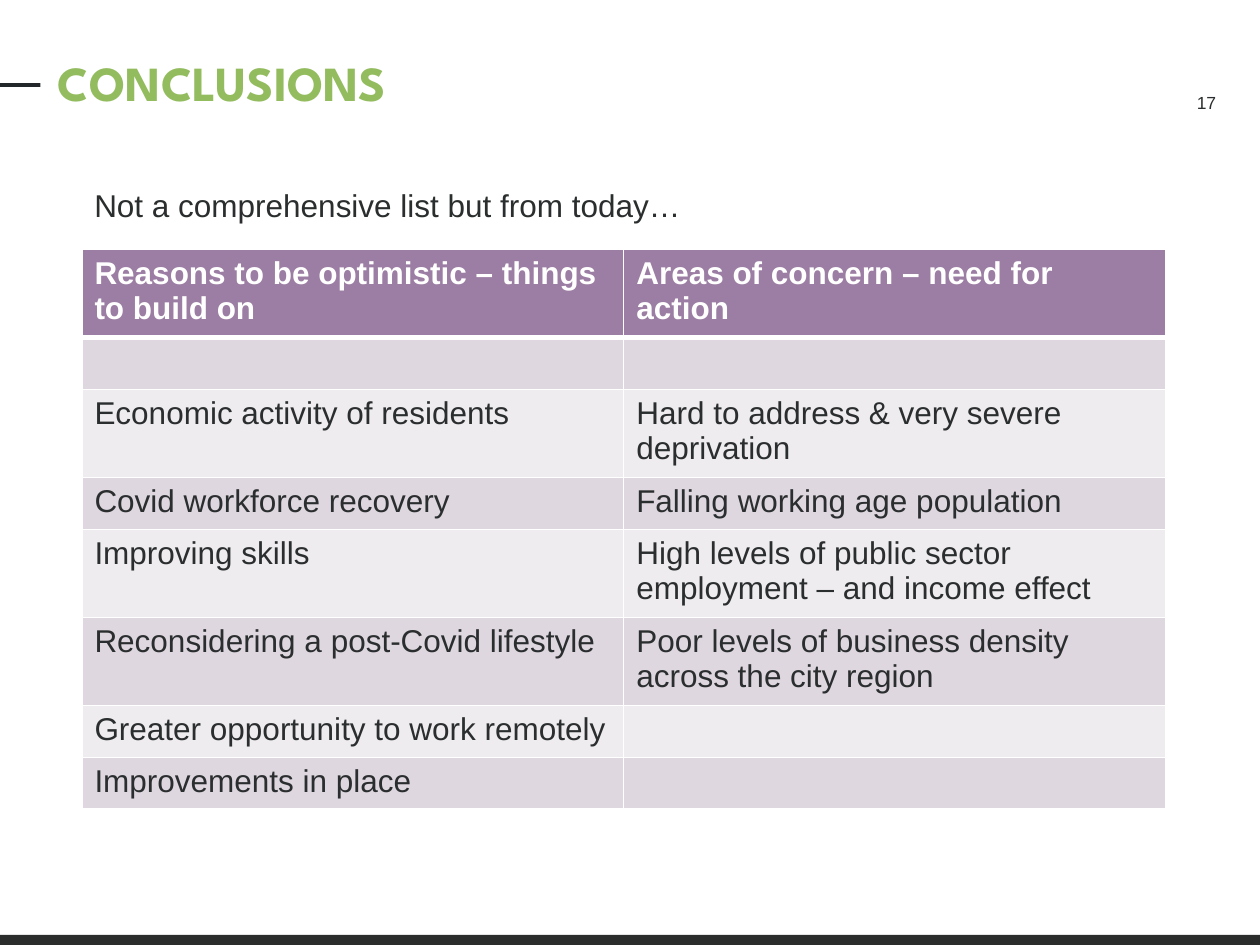
from lxml import etree
from pptx import Presentation
from pptx.dml.color import RGBColor
from pptx.enum.shapes import MSO_SHAPE
from pptx.enum.text import MSO_ANCHOR, PP_ALIGN
from pptx.oxml.ns import qn
from pptx.util import Inches, Pt

RECT = MSO_SHAPE.RECTANGLE
TOP = MSO_ANCHOR.TOP
LEFT, RIGHT = PP_ALIGN.LEFT, PP_ALIGN.RIGHT

INK, WHITE, GREEN = "2B2E2E", "FFFFFF", "93BC5F"
HEAD, BANDS = "9C7DA3", ("EFECF0", "DED7E0")

TITLE = "CONCLUSIONS"
INTRO = "Not a comprehensive list but from today…"
PAGE = "17"
ROWS = [
    ("Reasons to be optimistic – things to build on",
     "Areas of concern – need for action"),
    ("", ""),
    ("Economic activity of residents",
     "Hard to address & very severe deprivation"),
    ("Covid workforce recovery", "Falling working age population"),
    ("Improving skills",
     "High levels of public sector employment – and income effect"),
    ("Reconsidering a post-Covid lifestyle",
     "Poor levels of business density across the city region"),
    ("Greater opportunity to work remotely", ""),
    ("Improvements in place", ""),
]
BARS = [((0, 0.66, 0.32, 0.03), "24272A"), ((0, 7.42, 10, 0.08), "2B2D2D")]
TABLE = (0.65, 1.98, 8.6, 3.28)


def place(box):
    return [Inches(v) for v in box]


def rgb(code):
    return RGBColor.from_string(code)


def style(para, size, color, bold=False, face="Arial", align=LEFT):
    para.alignment = align
    font = para.font
    font.name, font.size, font.bold = face, Pt(size), bold
    font.color.rgb = rgb(color)


def add_text(slide, box, text, size, align=LEFT):
    frame = slide.shapes.add_textbox(*place(box)).text_frame
    frame.word_wrap = True
    frame.text = text
    style(frame.paragraphs[0], size, INK, align=align)


def add_bar(slide, box, color):
    bar = slide.shapes.add_shape(RECT, *place(box))
    bar.shadow.inherit = False
    bar.fill.solid()
    bar.fill.fore_color.rgb = rgb(color)
    bar.line.fill.background()


def set_edges(cell, top, bottom):
    """Draw white cell borders; top and bottom are widths in points."""
    props = cell._tc.get_or_add_tcPr()
    for side, width in (("L", 1), ("R", 1), ("T", top), ("B", bottom)):
        line = etree.SubElement(props, qn("a:ln" + side), w=str(Pt(width)))
        fill = etree.SubElement(line, qn("a:solidFill"))
        etree.SubElement(fill, qn("a:srgbClr"), val=WHITE)


def add_grid(slide):
    grid = slide.shapes.add_table(len(ROWS), 2, *place(TABLE)).table
    for r, texts in enumerate(ROWS):
        grid.rows[r].height = Inches(0.41)
        head = r == 0
        for c, text in enumerate(texts):
            cell = grid.cell(r, c)
            set_edges(cell, 3 if r == 1 else 1, 3 if head else 1)
            cell.fill.solid()
            cell.fill.fore_color.rgb = rgb(HEAD if head else BANDS[r % 2])
            cell.text = text
            style(cell.text_frame.paragraphs[0], 18,
                  WHITE if head else INK, bold=head)


def add_title(slide):
    title = slide.shapes.title
    title.left, title.top, title.width, title.height = place(
        (0.46, 0.42, 7.04, 0.47))
    frame = title.text_frame
    frame.margin_left = frame.margin_right = 0
    frame.margin_top = frame.margin_bottom = 0
    frame.vertical_anchor = TOP
    frame.text = TITLE
    style(frame.paragraphs[0], 28, GREEN, bold=True, face="League Spartan")


def main():
    deck = Presentation()
    deck.slide_width, deck.slide_height = Inches(10), Inches(7.5)
    slide = deck.slides.add_slide(deck.slide_layouts[5])
    for box, color in BARS:
        add_bar(slide, box, color)
    add_title(slide)
    add_text(slide, (7.5, 0.68, 2.25, 0.4), PAGE, 10, RIGHT)
    add_grid(slide)
    add_text(slide, (0.65, 1.43, 8.94, 0.4), INTRO, 18)
    deck.save("out.pptx")


if __name__ == "__main__":
    main()
